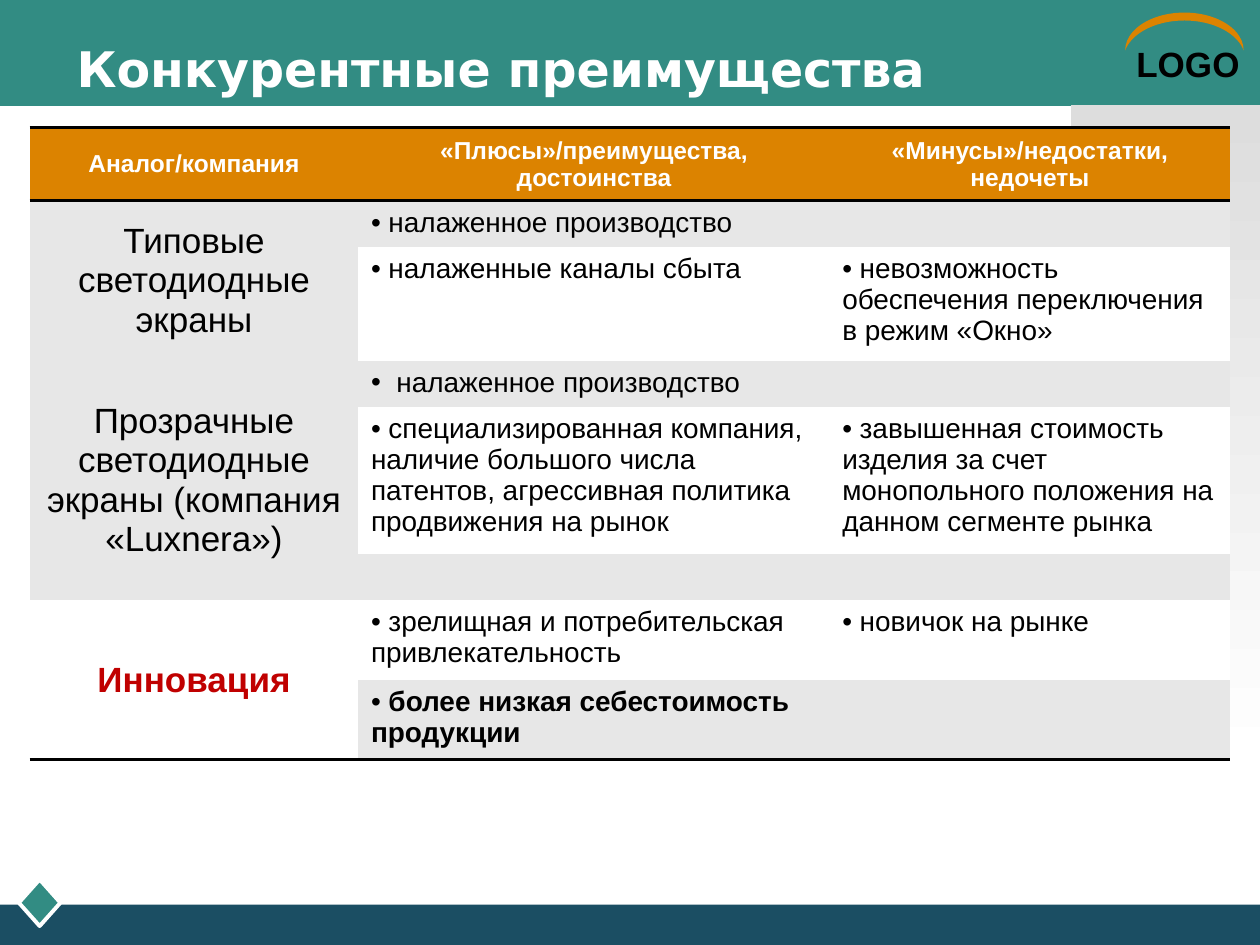
from lxml import etree
from pptx import Presentation
from pptx import util as u
from pptx.dml.color import RGBColor
from pptx.enum import shapes, text
from pptx.oxml import ns

COLORS = {"teal": "328C83", "navy": "1B4E63", "orange": "DC8300", "gray": "E7E7E7",
          "shade": "DDDDDD", "white": "FFFFFF", "black": "000000", "red": "C00000"}
RGB = {name: RGBColor.from_string(value) for name, value in COLORS.items()}

deck = Presentation()
deck.slide_width, deck.slide_height = u.Inches(10), u.Inches(7.5)
page = deck.slides.add_slide(deck.slide_layouts[6])
COL, ROW = deck.slide_width / 100, deck.slide_height / 75


def area(left, top, width, height):
    return [round(n * unit) for n, unit in zip((left, top, width, height), (COL, ROW) * 2)]


def write(para, words, **format):
    span = para.add_run()
    span.text = words
    span.font.color.rgb = RGB[format.pop("color")]
    for key, value in format.items():
        setattr(span.font, key, value)


kinds = shapes.MSO_SHAPE
decor = {}
for part, kind, place, color in [
    ("header", kinds.RECTANGLE, (0, 0, 100, 8.4), "teal"),
    ("footer", kinds.RECTANGLE, (0, 71.8, 100, 3.2), "navy"),
    ("diamond", kinds.DIAMOND, (1.5, 69.8, 3.3, 3.7), "teal"),
    ("arc", kinds.MOON, (92.5, -2.2, 3, 9.4), "orange"),
    ("side band", kinds.RECTANGLE, (85, 8.3, 15, 52.5), "shade"),
]:
    shape = page.shapes.add_shape(kind, *area(*place))
    shape.shadow.inherit = False
    shape.fill.solid()
    shape.fill.fore_color.rgb = RGB[color]
    shape.line.fill.background()
    decor[part] = shape
decor["diamond"].line.color.rgb = RGB["white"]
decor["diamond"].line.width = u.Pt(2.25)
decor["arc"].rotation = 90
decor["arc"].adjustments[0] = 0.21
fade = decor["side band"].fill
fade.gradient()
fade.gradient_angle = 270
for stop, color, position in zip(fade.gradient_stops, ("shade", "white"), (0, 1)):
    stop.color.rgb = RGB[color]
    stop.position = position

for words, place, format in [
    ("LOGO", (89.2, 2.9, 10.8, 4.3), {"size": u.Pt(20), "name": "Arial", "color": "black"}),
    ("Конкурентные преимущества", (5.1, 2.25, 84, 6.2),
     {"size": u.Pt(28), "name": "DejaVu Sans", "color": "white"}),
]:
    box = page.shapes.add_textbox(*area(*place))
    box.text_frame.word_wrap = True
    box.text_frame.vertical_anchor = text.MSO_ANCHOR.MIDDLE
    write(box.text_frame.paragraphs[0], words, bold=True, **format)

widths = [26.1, 37.4, 31.8]
heights = [5.8, 3.4, 5.8, 3.4, 8.2, 3.4, 5.8, 5.8]
rows = [
    ("Аналог/компания", "«Плюсы»/преимущества, достоинства", "«Минусы»/недостатки, недочеты"),
    ("Типовые светодиодные экраны", "налаженное производство", ""),
    ("", "налаженные каналы сбыта", "невозможность обеспечения переключения в режим «Окно»"),
    ("Прозрачные светодиодные экраны (компания «Luxnera»)", "налаженное производство", ""),
    ("", "специализированная компания, наличие большого числа патентов, "
     "агрессивная политика продвижения на рынок",
     "завышенная стоимость изделия за счет монопольного положения на данном сегменте рынка"),
    ("", "", ""),
    ("Инновация", "зрелищная и потребительская привлекательность", "новичок на рынке"),
    ("", "более низкая себестоимость продукции", ""),
]
HEAD, INNOVATION, LAST = 0, 6, 7
SPACED = 3

frame = page.shapes.add_table(len(rows), len(widths), *area(2.35, 10.15, sum(widths), sum(heights)))
table = frame.table
table.first_row = table.horz_banding = False
table._tbl.tblPr.find(ns.qn("a:tableStyleId")).text = "{2D5ABB26-0587-4C30-8999-92F81FD0307C}"
for column, width in zip(table.columns, widths):
    column.width = round(width * COL)
for line, height in zip(table.rows, heights):
    line.height = round(height * ROW)
for first, last in [(1, 2), (3, 5), (6, 7)]:
    table.cell(first, 0).merge(table.cell(last, 0))

for r, entries in enumerate(rows):
    for c, words in enumerate(entries):
        cell = table.cell(r, c)
        props = cell._tc.get_or_add_tcPr()
        edges = {HEAD: ["lnT", "lnB"], LAST: ["lnB"]}.get(r, [])
        if (r, c) == (INNOVATION, 0):
            edges = ["lnB"]
        for edge in edges:
            border = etree.SubElement(props, ns.qn(f"a:{edge}"), w=str(u.Pt(2)))
            paint = etree.SubElement(border, ns.qn("a:solidFill"))
            etree.SubElement(paint, ns.qn("a:srgbClr"), val=COLORS["black"])
        gray = r in (1, 3, 5, 7) if c else r < INNOVATION
        cell.fill.solid()
        cell.fill.fore_color.rgb = RGB["orange" if r == HEAD else "gray" if gray else "white"]
        para = cell.text_frame.paragraphs[0]
        if not words:
            etree.SubElement(para._p, ns.qn("a:endParaRPr"), sz="1600")
            continue
        format = {"name": "Arial", "size": u.Pt(16), "color": "black", "bold": r == LAST}
        if r == HEAD or c == 0:
            cell.vertical_anchor = text.MSO_ANCHOR.MIDDLE
            para.alignment = text.PP_ALIGN.CENTER
            format["size"] = u.Pt(14 if r == HEAD else 20)
            format["bold"] = r in (HEAD, INNOVATION)
            format["color"] = {HEAD: "white", INNOVATION: "red"}.get(r, "black")
        else:
            hang = u.Inches(0.14) if r == SPACED else 0
            bullet = para._p.get_or_add_pPr()
            bullet.set("marL", str(hang))
            bullet.set("indent", str(-hang))
            etree.SubElement(bullet, ns.qn("a:buFont"), typeface="Arial")
            etree.SubElement(bullet, ns.qn("a:buChar"), char="•")
            words = f" {words}"
        write(para, words, **format)

deck.save("out.pptx")
